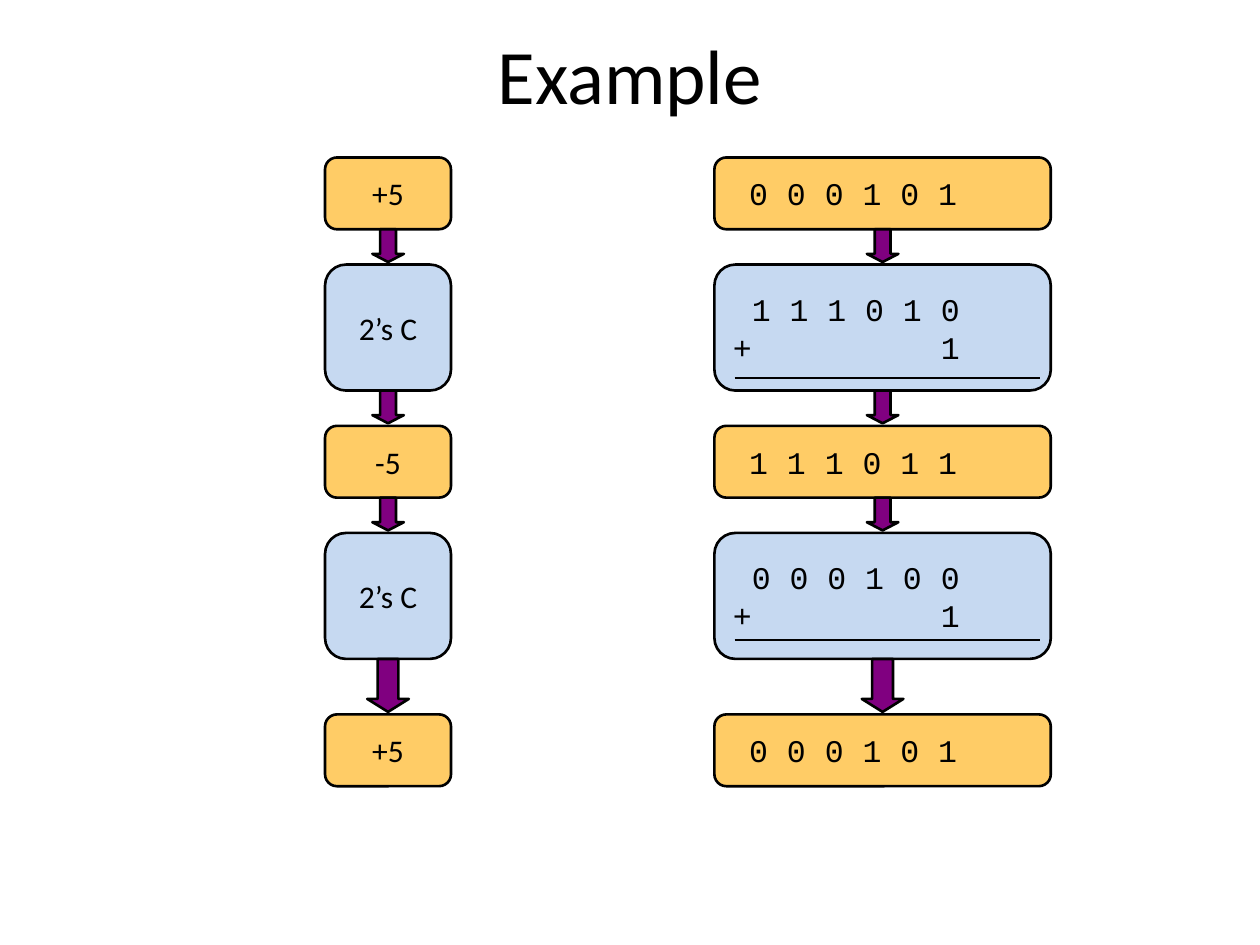
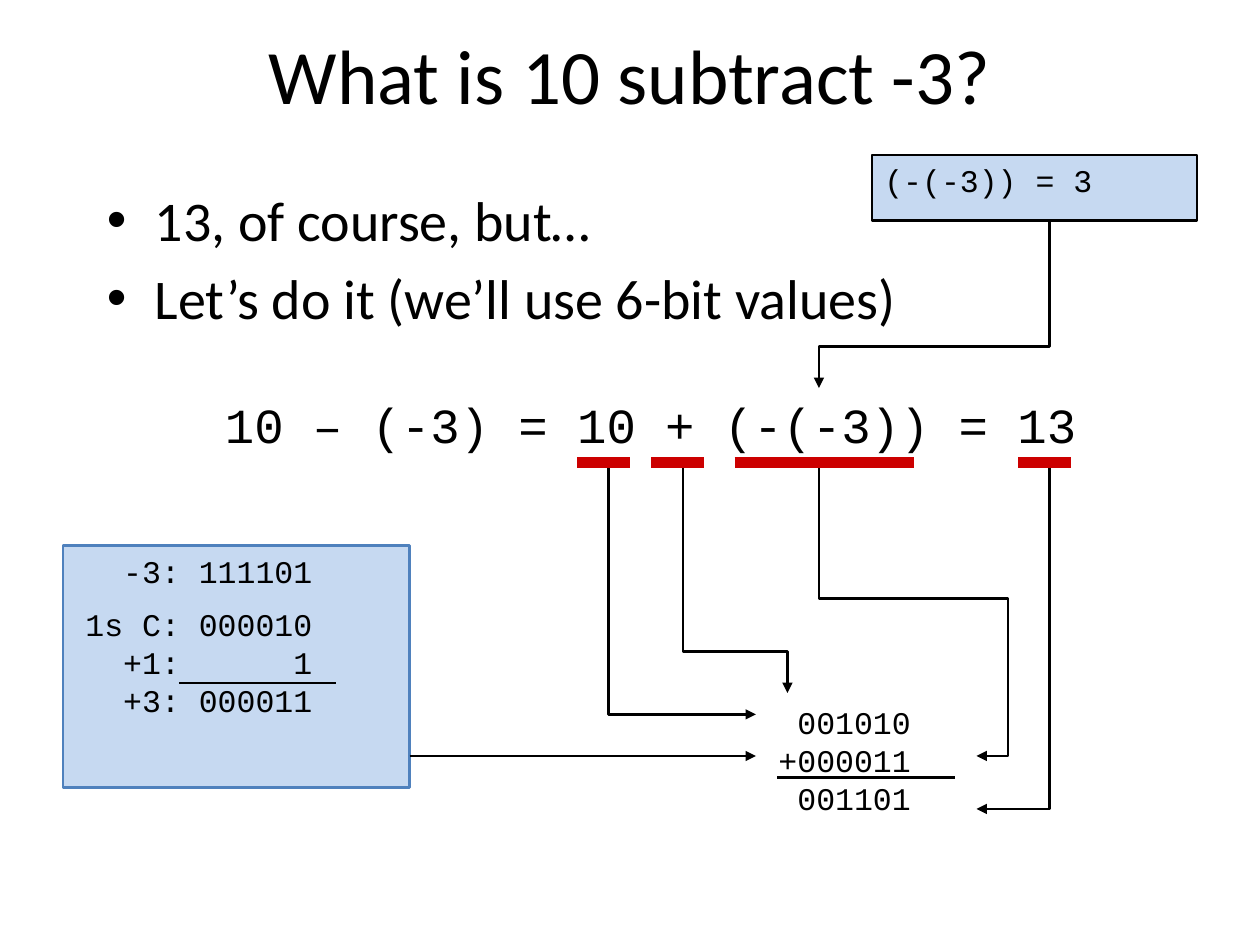
from lxml.etree import SubElement
from pptx import Presentation
from pptx.dml.color import RGBColor
from pptx.enum.shapes import MSO_CONNECTOR as CONN, MSO_SHAPE as SHAPE
from pptx.enum.text import MSO_ANCHOR as ANCHOR, PP_ALIGN as ALIGN
from pptx.oxml.ns import qn
from pptx.util import Inches, Pt

COLORS = {"ink": "000000", "value": "FFCC66", "step": "C6D9F1",
          "arrow": "800080", "mark": "CC0000", "frame": "4F81BD"}
SANS, MONO = "Calibri", "Courier New"


def rgb(name):
    return RGBColor.from_string(COLORS[name])


def write(sp, text, font=MONO, size=18, align=ALIGN.LEFT, anchor=ANCHOR.TOP,
          before=0.0, bullet=False):
    """Fill a shape with text: \\n starts a paragraph, \\v breaks a line.

    before is the space between paragraphs as a share of the text size.
    """
    tf = sp.text_frame
    tf.word_wrap = True
    tf.vertical_anchor = anchor
    for i, para in enumerate(text.split("\n")):
        p = tf.add_paragraph() if i else tf.paragraphs[0]
        p.alignment = align
        if i:
            p.space_before = Pt(size * before)
        for j, line in enumerate(para.split("\v")):
            if j:
                p.add_line_break()
            r = p.add_run()
            r.text = line
            r.font.name, r.font.size = font, Pt(size)
            r.font.color.rgb = rgb("ink")
        if bullet:
            pPr = p._p.get_or_add_pPr()
            pPr.set("marL", str(Inches(0.38)))
            pPr.set("indent", str(Inches(-0.38)))
            SubElement(pPr, qn("a:buFont")).set("typeface", "Arial")
            SubElement(pPr, qn("a:buChar")).set("char", "•")


def add_text(s, x, y, w, h, text, **fmt):
    sp = s.shapes.add_textbox(Inches(x), Inches(y), Inches(w), Inches(h))
    write(sp, text, **fmt)


def add_box(s, kind, x, y, w, h, fill, line="ink"):
    sp = s.shapes.add_shape(kind, Inches(x), Inches(y), Inches(w), Inches(h))
    sp.shadow.inherit = False
    sp.fill.solid()
    sp.fill.fore_color.rgb = rgb(fill)
    set_line(sp, line)
    return sp


def set_line(sp, color="ink", width=1.5, arrow=False):
    sp.line.color.rgb = rgb(color)
    sp.line.width = Pt(width)
    if arrow:
        ln = sp._element.spPr.find(qn("a:ln"))
        SubElement(ln, qn("a:tailEnd")).set("type", "triangle")


def add_line(s, x, y, length, **fmt):
    """Draw a horizontal line to the right of (x, y)."""
    c = s.shapes.add_connector(CONN.STRAIGHT, Inches(x), Inches(y),
                               Inches(x + length), Inches(y))
    set_line(c, **fmt)
    SubElement(c._element.spPr, qn("a:effectLst"))


def add_route(s, x, y, points):
    """Draw a bent arrow through points measured from (x, y)."""
    pts = [(Inches(x + dx), Inches(y + dy)) for dx, dy in points]
    fb = s.shapes.build_freeform(*pts[0])
    fb.add_line_segments(pts[1:], close=False)
    sp = fb.convert_to_shape()
    sp.shadow.inherit = False
    sp.fill.background()
    set_line(sp, arrow=True)


def new_slide(prs, title):
    s = prs.slides.add_slide(prs.slide_layouts[6])
    add_text(s, 0.75, 0.17, 8.5, 0.83, title, font=SANS, size=44,
             align=ALIGN.CENTER, anchor=ANCHOR.MIDDLE)
    return s


# Height and fill of each box, then gap, arrow width and arrow head below it
VALUE, STEP = (0.57, "value"), (1, "step")
SHORT, LONG = (0.28, 0.25, 0.259), (0.44, 0.33, 0.312)
FLOW = [(VALUE, SHORT), (STEP, SHORT), (VALUE, SHORT), (STEP, LONG), (VALUE, None)]


def flow_column(s, x, y, w, texts, rules=(), **fmt):
    """Stack boxes joined by arrows; rules maps a box to its sum line's rise."""
    rules = dict(rules)
    for i, (((h, fill), arrow), text) in enumerate(zip(FLOW, texts)):
        sp = add_box(s, SHAPE.ROUNDED_RECTANGLE, x, y, w, h, fill)
        write(sp, text, anchor=ANCHOR.MIDDLE, **fmt)
        if i in rules:
            add_line(s, x + 0.16, y + h - rules[i], w - 0.25)
        y += h
        if arrow:
            gap, aw, head = arrow
            sp = add_box(s, SHAPE.DOWN_ARROW, x + (w - aw) / 2, y, aw,
                         gap - 0.02, "arrow")
            sp.adjustments[1] = head
            y += gap


def example_slide(prs):
    s = new_slide(prs, "Example")
    flow_column(s, 2.58, 1.25, 1, ["+5", "2’s C", "-5", "2’s C", "+5"],
                font=SANS, align=ALIGN.CENTER)
    flow_column(s, 5.67, 1.25, 2.67,
                [" 0 0 0 1 0 1", " 1 1 1 0 1 0\v+          1", " 1 1 1 0 1 1",
                 " 0 0 0 1 0 0\v+          1", " 0 0 0 1 0 1"],
                rules={1: 0.1, 3: 0.15})


def equation(s, x, y):
    """Write the equation, mark its terms and lead each to the addition."""
    add_text(s, x, y, 7.67, 0.57, "10 – (-3) = 10 + (-(-3)) = 13", size=28,
             align=ALIGN.CENTER)
    base = y + 0.59
    for route in [
        [(3.5, 0), (3.5, 2), (4.67, 2)],
        [(4.09, 0), (4.09, 1.5), (4.92, 1.5), (4.92, 1.83)],
        [(5.17, 0), (5.17, 1.08), (6.67, 1.08), (6.67, 2.33), (6.42, 2.33)],
        [(7, 0), (7, 2.75), (6.42, 2.75)],
    ]:
        add_route(s, x, base, route)
    for dx, length in [(3.25, 0.42), (3.84, 0.42), (4.5, 1.42), (6.75, 0.42)]:
        add_line(s, x + dx, base, length, color="mark", width=6)


def complement_note(s, x, y):
    add_box(s, SHAPE.RECTANGLE, x, y, 2.75, 1.92, "step", "frame")
    add_text(s, x + 0.08, y, 3, 1.9,
             "  -3: 111101\n1s C: 000010\v  +1:      1\v  +3: 000011", before=0.5)
    add_line(s, x + 0.92, y + 1.09, 1.25)
    add_line(s, x + 2.75, y + 1.67, 2.75, arrow=True)


def addition(s, x, y):
    add_text(s, x, y, 1.75, 1.3, " 001010\v+000011\v 001101")
    add_line(s, x + 0.09, y + 0.64, 1.41)


def negation_callout(s, x, y):
    sp = add_box(s, SHAPE.RECTANGLE, x, y, 2.58, 0.52, "step")
    write(sp, "(-(-3)) = 3")
    add_route(s, x, y + 0.52, [(1.41, 0), (1.41, 1), (-0.42, 1), (-0.42, 1.33)])


def subtraction_slide(prs):
    s = new_slide(prs, "What is 10 subtract -3?")
    add_text(s, 0.75, 1.42, 8.5, 4.5,
             "13, of course, but…\nLet’s do it (we’ll use 6-bit values)",
             font=SANS, size=32, before=0.2, bullet=True)
    complement_note(s, 0.5, 4.33)
    addition(s, 6.08, 5.53)
    equation(s, 1.33, 3.08)
    negation_callout(s, 6.92, 1.23)


def main():
    prs = Presentation()
    prs.slide_width, prs.slide_height = Inches(10), Inches(7.5)
    example_slide(prs)
    subtraction_slide(prs)
    prs.save("out.pptx")


if __name__ == "__main__":
    main()
